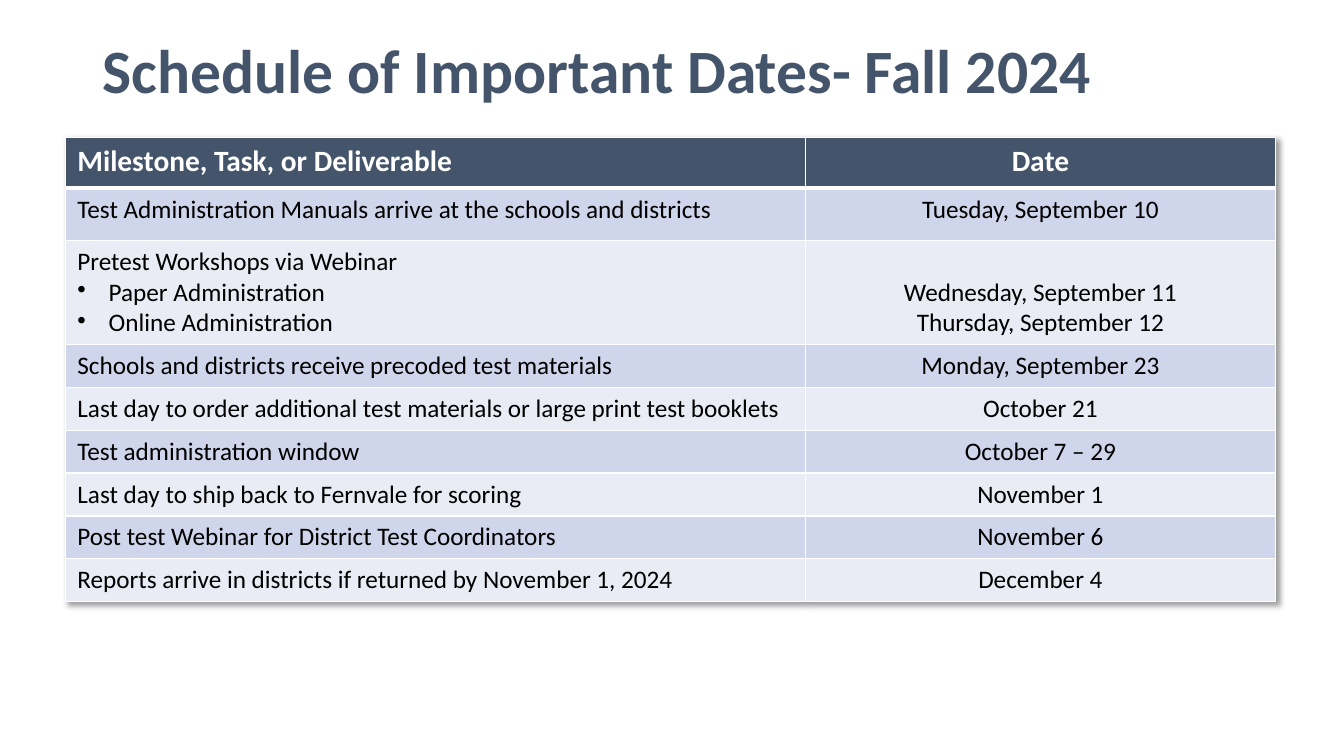
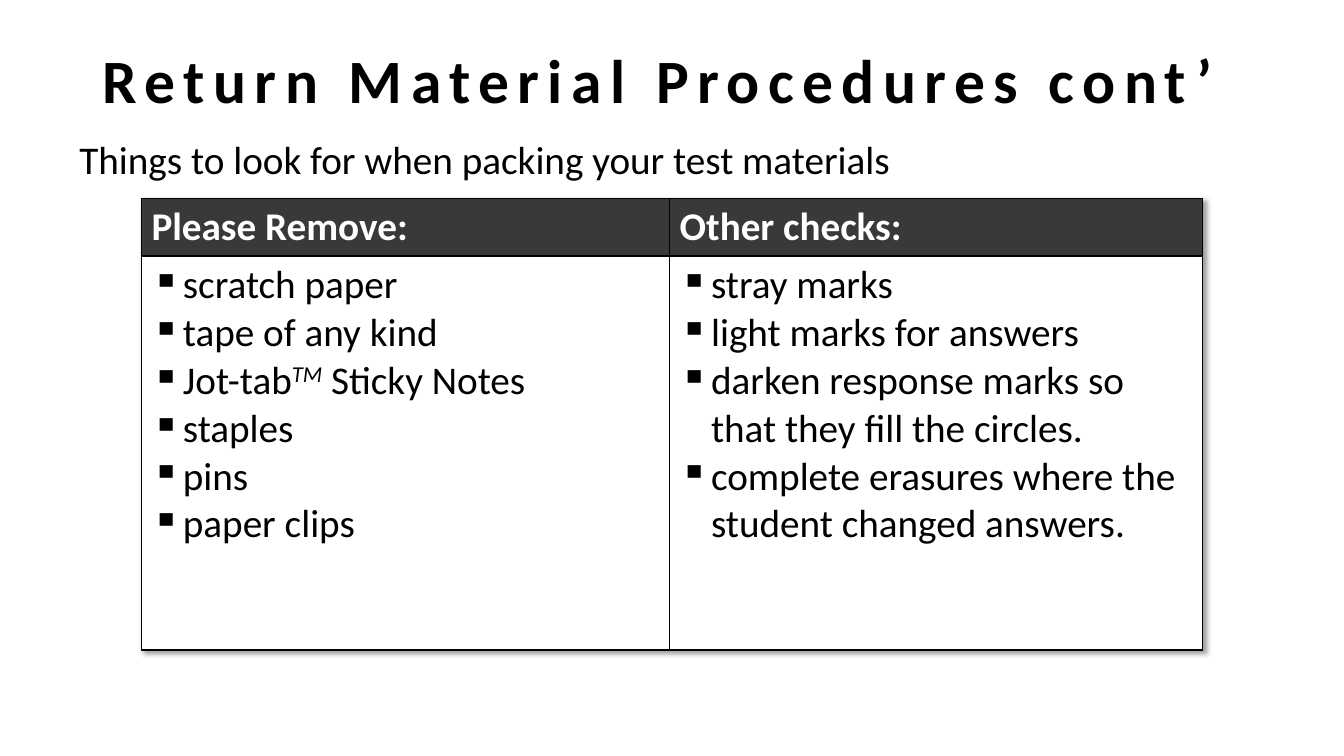
from lxml.etree import SubElement as Sub
from pptx import Presentation
from pptx.dml.color import RGBColor as Rgb
from pptx.enum.text import MSO_ANCHOR as Anchor, PP_ALIGN as Align
from pptx.oxml import parse_xml
from pptx.oxml.ns import nsdecls, qn
from pptx.util import Cm, Pt

FONT = "Calibri"
COLORS = {
    "white": "FFFFFF",
    "black": "000000",
    "slate": "44546A",
    "coal": "3B3838",
    "blue": "CFD5EA",
    "pale": "E9EBF5",
}
SHADOW = (
    f'<a:effectLst {nsdecls("a")}><a:outerShdw blurRad="50800" dist="38100" '
    'dir="2700000" algn="tl" rotWithShape="0"><a:srgbClr val="000000">'
    '<a:alpha val="40000"/></a:srgbClr></a:outerShdw></a:effectLst>'
)

DATES = [
    (["Test Administration Manuals arrive at the schools and districts"],
     ["Tuesday, September 10"]),
    (["Pretest Workshops via Webinar", "Paper Administration", "Online Administration"],
     ["Wednesday, September 11", "Thursday, September 12"]),
    (["Schools and districts receive precoded test materials"],
     ["Monday, September 23"]),
    (["Last day to order additional test materials or large print test booklets"],
     ["October 21"]),
    (["Test administration window"], ["October 7 – 29"]),
    (["Last day to ship back to Fernvale for scoring"], ["November 1"]),
    (["Post test Webinar for District Test Coordinators"], ["November 6"]),
    (["Reports arrive in districts if returned by November 1, 2024"], ["December 4"]),
]
CHECKS = {
    "Please Remove:": [
        "scratch paper", "tape of any kind", ("Jot-tab", "TM", " Sticky Notes"),
        "staples", "pins", "paper clips",
    ],
    "Other checks:": [
        "stray marks", "light marks for answers",
        "darken response marks so that they fill the circles.",
        "complete erasures where the student changed answers.",
    ],
}


def write(frame, text, size=18, color="black", bold=False, align=Align.LEFT,
          bullet=None, space=0, line=None):
    para = frame.paragraphs[0]
    if para.runs:
        para = frame.add_paragraph()
    para.alignment = align
    if line:
        para.line_spacing = line
    if bullet:
        props = para._p.get_or_add_pPr()
        props.set("marL", str(Cm(0.79)))
        props.set("indent", str(-Cm(0.79)))
        Sub(props, qn("a:buChar")).set("char", bullet)
    parts = (text,) if isinstance(text, str) else text
    for i, part in enumerate(parts):
        run = para.add_run()
        run.text = part
        font = run.font
        font.name, font.size, font.bold = FONT, Pt(size), bold
        font.color.rgb = Rgb.from_string(COLORS[color])
        props = run._r.get_or_add_rPr()
        if space:
            props.set("spc", str(space * 100))
        if i % 2:
            font.italic = True
            props.set("baseline", "30000")


def label(slide, box, text, **style):
    frame = slide.shapes.add_textbox(*map(Cm, box)).text_frame
    frame.word_wrap = True
    frame.vertical_anchor = Anchor.MIDDLE
    write(frame, text, line=0.9, **style)


def title(slide, top, text, **style):
    label(slide, (2.34, top, 29.21, 2.2), text, size=44, bold=True, **style)


def grid(slide, left, top, cols, rows):
    frame = slide.shapes.add_table(
        len(rows), len(cols), Cm(left), Cm(top), Cm(sum(cols)), Cm(sum(rows)))
    table = frame.table
    for col, width in zip(table.columns, cols):
        col.width = Cm(width)
    for row, height in zip(table.rows, rows):
        row.height = Cm(height)
    table._tbl.tblPr.insert(0, parse_xml(SHADOW))
    return table


def dress(cell, fill, edge, pad, over=1, under=1):
    cell.margin_left = cell.margin_right = Cm(pad * 2)
    cell.margin_top = cell.margin_bottom = Cm(pad)
    props = cell._tc.get_or_add_tcPr()
    for side, width in zip("LRTB", (1, 1, over, under)):
        line = Sub(props, qn(f"a:ln{side}"))
        line.set("w", str(Pt(width)))
        paint = Sub(line, qn("a:solidFill"))
        Sub(paint, qn("a:srgbClr")).set("val", COLORS[edge])
    cell.fill.solid()
    cell.fill.fore_color.rgb = Rgb.from_string(COLORS[fill])
    return cell.text_frame


def dates(slide, left, top):
    heights = [1.27, 1.32, 2.62] + [1.08] * 6
    table = grid(slide, left, top, (18.64, 11.86), heights)
    sides = (Align.LEFT, Align.CENTER)
    heads = ("Milestone, Task, or Deliverable", "Date")
    for c, (head, side) in enumerate(zip(heads, sides)):
        frame = dress(table.cell(0, c), "slate", "white", 0.15, under=3)
        write(frame, head, size=21, color="white", bold=True, align=side)
        for r, row in enumerate(DATES, 1):
            cell = table.cell(r, c)
            frame = dress(cell, "blue" if r % 2 else "pale", "white", 0.15,
                          over=3 if r == 1 else 1)
            if len(row[c]) < len(row[0]):
                cell.vertical_anchor = Anchor.BOTTOM
            for i, text in enumerate(row[c]):
                write(frame, text, align=side, bullet="•" if i and c == 0 else None)


def checks(slide, left, top):
    table = grid(slide, left, top, (13.31, 13.44), (1.45, 9.93))
    for c, (head, items) in enumerate(CHECKS.items()):
        frame = dress(table.cell(0, c), "coal", "black", 0.13)
        write(frame, head, size=28, color="white", bold=True)
        frame = dress(table.cell(1, c), "white", "black", 0.13)
        for item in items:
            write(frame, item, size=28, bullet="▪")


def main():
    deck = Presentation()
    deck.slide_width, deck.slide_height = Cm(33.87), Cm(19.05)
    blank = deck.slide_layouts[6]

    slide = deck.slides.add_slide(blank)
    title(slide, 0.76, "Schedule of Important Dates- Fall 2024", color="slate")
    dates(slide, 1.65, 3.47)

    slide = deck.slides.add_slide(blank)
    label(slide, (1.75, 3, 30.4, 2.13),
          "Things to look for when packing your test materials", size=28)
    checks(slide, 3.56, 5)
    title(slide, 1, "Return Material Procedures cont’", space=6)

    deck.save("out.pptx")


if __name__ == "__main__":
    main()
